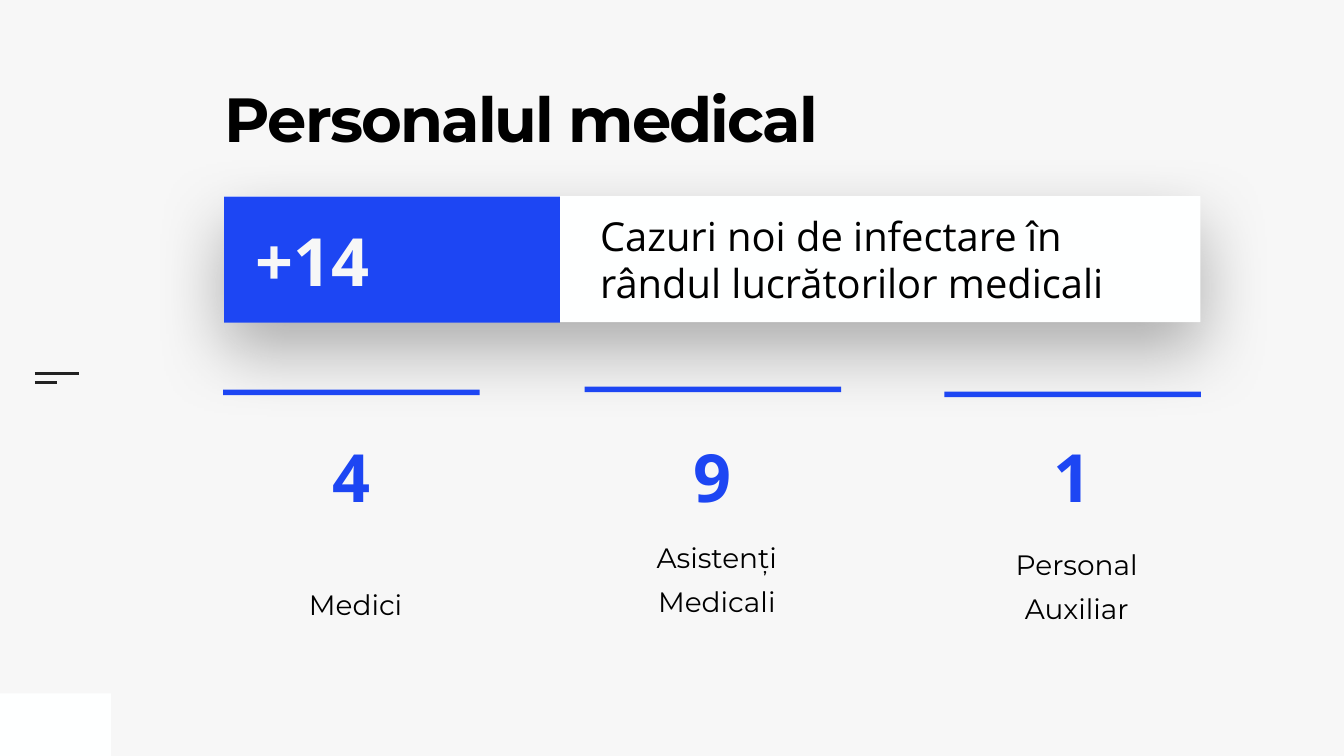
import pptx
import pptx.dml.color
import pptx.enum.shapes
import pptx.enum.text
import pptx.oxml
import pptx.oxml.ns
import pptx.util

RGBColor = pptx.dml.color.RGBColor
Align = pptx.enum.text.PP_ALIGN
Anchor = pptx.enum.text.MSO_ANCHOR

PAPER = RGBColor(0xF7, 0xF7, 0xF7)
WHITE = RGBColor(0xFE, 0xFF, 0xFF)
BLUE = RGBColor(0x1D, 0x46, 0xF3)
BLACK = RGBColor(0x00, 0x00, 0x00)
DARK = RGBColor(0x22, 0x22, 0x22)

EMU_PER_PX = 9144  # 100 px to the inch
HEADING_FONT = "Montserrat"
BODY_FONT = "Open Sans"

CARD_WIDTH, CARD_HEIGHT, RULE_HEIGHT = 509, 546, 11
# left, top of card, top of rule, count, label
CARDS = [
    (443, 773, 773, "4", "Medici"),
    (1160, 767, 767, "9", "Asistenți Medicali"),
    (1874, 781, 777, "1", "Personal Auxiliar"),
]


def px(*lengths):
    return [pptx.util.Emu(length * EMU_PER_PX) for length in lengths]


def write(shape, text, size, font=BODY_FONT, color=BLACK, bold=False, align=Align.LEFT,
          anchor=Anchor.MIDDLE, insets=(10, 10, 10, 10), line_spacing=None,
          space_before=0, tracking=None):
    frame = shape.text_frame
    frame.word_wrap = True
    frame.auto_size = pptx.enum.text.MSO_AUTO_SIZE.NONE
    frame.vertical_anchor = anchor
    (frame.margin_left, frame.margin_top,
     frame.margin_right, frame.margin_bottom) = px(*insets)
    para = frame.paragraphs[0]
    para.alignment = align
    para.line_spacing = line_spacing
    para.space_before = pptx.util.Pt(space_before)
    span = para.add_run()
    span.text = text
    span.font.name = font
    span.font.size = pptx.util.Pt(size)
    span.font.bold = bold
    span.font.color.rgb = color
    if tracking is not None:
        span._r.get_or_add_rPr().set("spc", str(round(tracking * 100)))


class SlideBuilder:
    def __init__(self, deck):
        self.page = deck.slides.add_slide(deck.slide_layouts[5])
        self.page.background.fill.solid()
        self.page.background.fill.fore_color.rgb = PAPER

    def title(self, text, left, top, width, height, **style):
        box = self.page.shapes.title
        box.left, box.top, box.width, box.height = px(left, top, width, height)
        write(box, text, **style)

    def rectangle(self, left, top, width, height, color):
        box = self.page.shapes.add_shape(
            pptx.enum.shapes.MSO_SHAPE.RECTANGLE, *px(left, top, width, height))
        box.shadow.inherit = False
        box.fill.solid()
        box.fill.fore_color.rgb = color
        box.line.fill.background()
        return box

    def text(self, text, left, top, width, height, **style):
        write(self.page.shapes.add_textbox(*px(left, top, width, height)), text, **style)

    def line(self, left, top, length):
        line = self.page.shapes.add_connector(
            pptx.enum.shapes.MSO_CONNECTOR.STRAIGHT, *px(left, top, left + length, top))
        line.line.color.rgb = DARK
        line.line.width = pptx.util.Pt(3)
        line._element.spPr.append(pptx.oxml.parse_xml(
            "<a:effectLst %s/>" % pptx.oxml.ns.nsdecls("a")))

    def soft_shadow(self, box, blur, distance, opacity):
        effects = box._element.spPr.find(pptx.oxml.ns.qn("a:effectLst"))
        effects.append(pptx.oxml.parse_xml(
            f'<a:outerShdw {pptx.oxml.ns.nsdecls("a")} blurRad="{pptx.util.Pt(blur)}"'
            f' dist="{pptx.util.Pt(distance)}" dir="5400000" algn="t" rotWithShape="0">'
            f'<a:srgbClr val="{BLACK}"><a:alpha val="{opacity * 1000}"/></a:srgbClr>'
            '</a:outerShdw>'))


def main():
    deck = pptx.Presentation()
    deck.slide_width, deck.slide_height = px(2667, 1500)
    slide = SlideBuilder(deck)

    # Margin decoration
    slide.rectangle(0, 1376, 220, 124, WHITE)
    slide.line(69, 741, 88)
    slide.line(69, 759, 44)

    slide.title("Personalul medical", 446, 187, 1301, 273, size=89, font=HEADING_FONT,
                bold=True, anchor=Anchor.TOP, insets=(0, 0, 0, 0),
                line_spacing=0.8, tracking=-2.7)

    # Card bodies lie under the shadow of the banner
    for left, top, rule_top, count, label in CARDS:
        card = slide.rectangle(left, top, CARD_WIDTH, CARD_HEIGHT, PAPER)
        write(card, label, size=40, font=HEADING_FONT, align=Align.CENTER,
              anchor=Anchor.BOTTOM, insets=(55, 71, 39, 87),
              line_spacing=1.3, space_before=20)

    # Banner with the total
    banner = slide.rectangle(445, 389, 1937, 250, WHITE)
    slide.soft_shadow(banner, blur=100, distance=40, opacity=30)
    slide.text("Cazuri noi de infectare în rândul lucrătorilor medicali",
               1181, 408, 1176, 212, size=57)
    slide.rectangle(445, 390, 666, 250, BLUE)
    slide.text("+14", 498, 425, 603, 180, size=95, color=PAPER, bold=True)

    # Rules and counts of the cards
    for left, top, rule_top, count, label in CARDS:
        slide.rectangle(left, rule_top, CARD_WIDTH, RULE_HEIGHT, BLUE)
        slide.text(count, left, 854, CARD_WIDTH, 180, size=95, color=BLUE,
                   bold=True, align=Align.CENTER)

    deck.save("out.pptx")


if __name__ == "__main__":
    main()
